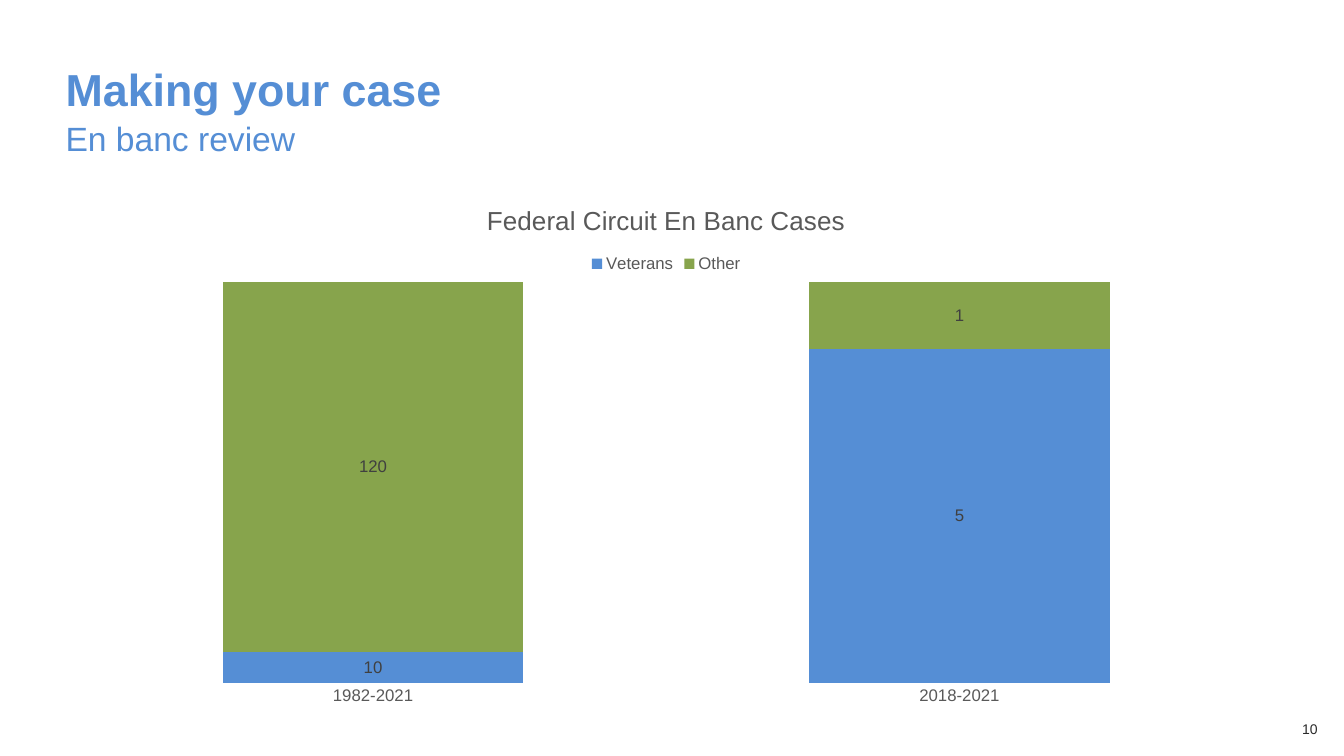
from lxml import etree
from pptx import Presentation
from pptx.chart.data import CategoryChartData
from pptx.dml.color import RGBColor
from pptx.enum.chart import XL_CHART_TYPE as ChartType, XL_LABEL_POSITION as LabelPosition
from pptx.enum.chart import XL_LEGEND_POSITION as LegendPosition, XL_TICK_MARK as TickMark
from pptx.enum.text import MSO_ANCHOR as Anchor, PP_ALIGN as Align
from pptx.oxml.ns import qn
from pptx.util import Pt

COLORS = {"blue": "558ED5", "green": "87A44C", "gray": "595959",
          "label": "404040", "number": "2A2A2A"}
LEFT, WIDTH = 39.6, 872.64
CATEGORIES = ("1982-2021", "2018-2021")
SERIES = (("Veterans", (10, 5), "blue"), ("Other", (120, 1), "green"))
PLOT_AREA = {"x": 0.02, "y": 0.187, "w": 0.96, "h": 0.752}


def color(name):
    return RGBColor.from_string(COLORS[name])


def style_font(font, size, color_name, bold=False):
    font.name = "Arial"
    font.size = Pt(size)
    font.bold = bold
    font.color.rgb = color(color_name)


def place(shape, box):
    shape.left, shape.top, shape.width, shape.height = (Pt(length) for length in box)


def fill_heading(shape, box, text, size, spacing, bold=False):
    place(shape, box)
    frame = shape.text_frame
    frame.text = text
    frame.vertical_anchor = Anchor.MIDDLE
    para = frame.paragraphs[0]
    para.alignment = Align.LEFT
    para.line_spacing = spacing
    para.space_before = Pt(0)
    properties = para._p.get_or_add_pPr()
    properties.set("marL", "0")
    properties.set("indent", "0")
    etree.SubElement(properties, qn("a:buNone"))
    style_font(para.font, size, "blue", bold)


def fix_plot_area(chart):
    """Pin the inner plot area to fractions of the chart box."""
    plot_area = chart._chartSpace.chart.plotArea
    for old in plot_area.findall(qn("c:layout")):
        plot_area.remove(old)
    layout = etree.Element(qn("c:layout"))
    manual = etree.SubElement(layout, qn("c:manualLayout"))
    settings = {"layoutTarget": "inner", "xMode": "edge", "yMode": "edge", **PLOT_AREA}
    for tag, value in settings.items():
        etree.SubElement(manual, qn(f"c:{tag}")).set("val", str(value))
    plot_area.insert(0, layout)


def add_case_chart(page, box):
    data = CategoryChartData()
    data.categories = CATEGORIES
    for name, values, _ in SERIES:
        data.add_series(name, values)
    chart = page.shapes.add_chart(ChartType.COLUMN_STACKED_100,
                                  *(Pt(length) for length in box), data).chart
    style_font(chart.font, 12, "gray")

    chart.has_title = True
    chart.chart_title.include_in_layout = False
    title = chart.chart_title.text_frame
    title.text = "Federal Circuit En Banc Cases"
    style_font(title.paragraphs[0].font, 18.6, "gray")

    chart.has_legend = True
    chart.legend.position = LegendPosition.TOP
    chart.legend.include_in_layout = False
    style_font(chart.legend.font, 12, "gray")

    chart.value_axis.has_major_gridlines = False
    chart.value_axis.visible = False
    axis = chart.category_axis
    axis.major_tick_mark = axis.minor_tick_mark = TickMark.NONE
    axis.format.line.fill.background()
    style_font(axis.tick_labels.font, 12, "gray")

    plot = chart.plots[0]
    plot.gap_width = 95
    plot.overlap = 100
    plot.vary_by_categories = False
    for series, (_, _, color_name) in zip(plot.series, SERIES):
        series.format.fill.solid()
        series.format.fill.fore_color.rgb = color(color_name)
        labels = series.data_labels
        labels.show_value = True
        labels.position = LabelPosition.CENTER
        style_font(labels.font, 12, "label")
    fix_plot_area(chart)


def add_page_number(page, box, number):
    frame = page.shapes.add_textbox(*(Pt(length) for length in box)).text_frame
    frame.word_wrap = True
    frame.text = number
    para = frame.paragraphs[0]
    para.alignment = Align.CENTER
    style_font(para.font, 10, "number")


def main():
    deck = Presentation()
    deck.slide_width, deck.slide_height = Pt(960), Pt(540)
    page = deck.slides.add_slide(deck.slide_layouts[1])
    title, subtitle = page.placeholders
    fill_heading(title, (LEFT, 41.76, WIDTH, 47.52), "Making your case", 32, 0.9, bold=True)
    fill_heading(subtitle, (LEFT, 77.04, WIDTH, 39.6), "En banc review", 24, 1.1)
    add_case_chart(page, (LEFT, 130.32, WIDTH, 380.88))
    add_page_number(page, (912.24, 511.2, 46.8, 28.8), "10")
    deck.save("out.pptx")


if __name__ == "__main__":
    main()
